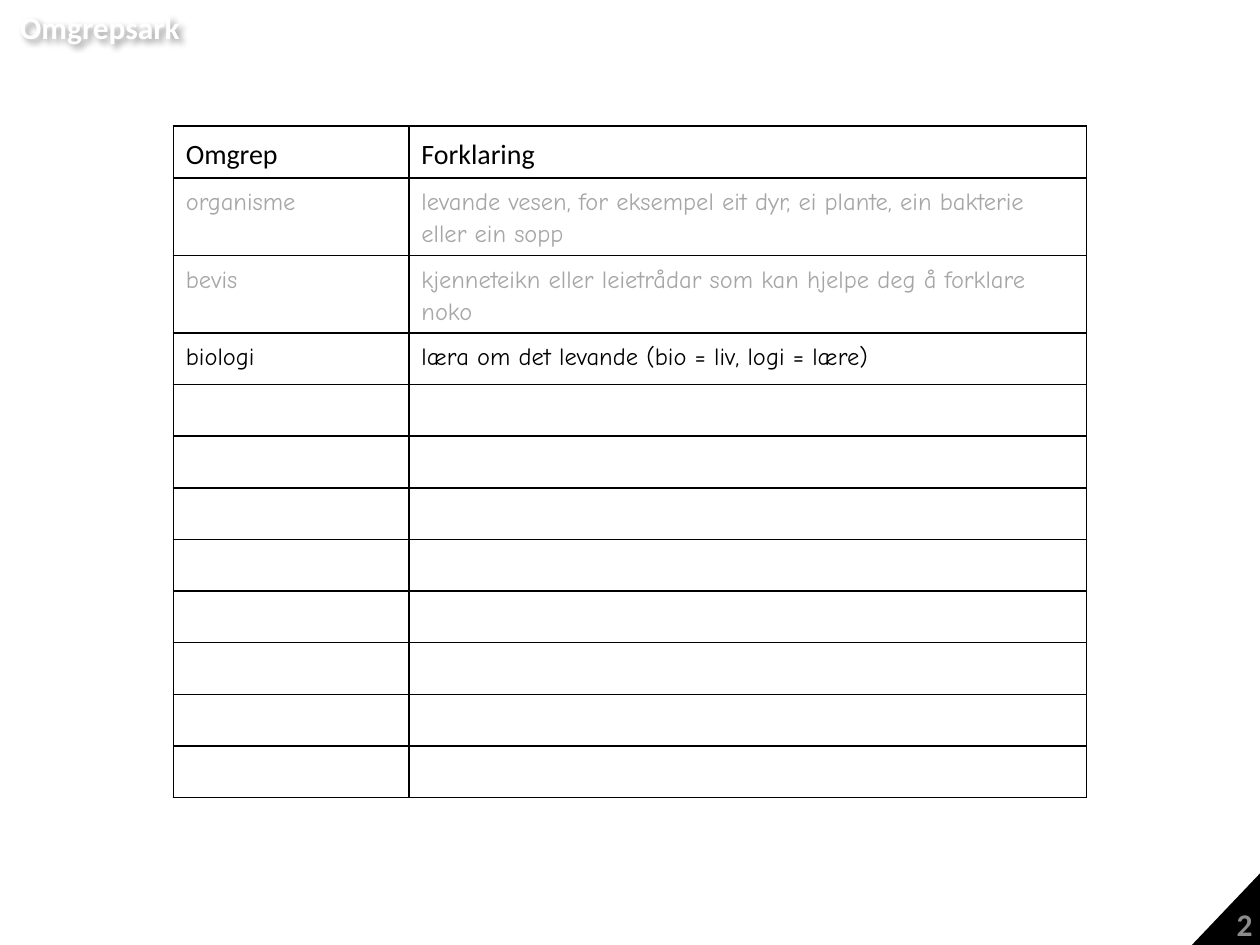
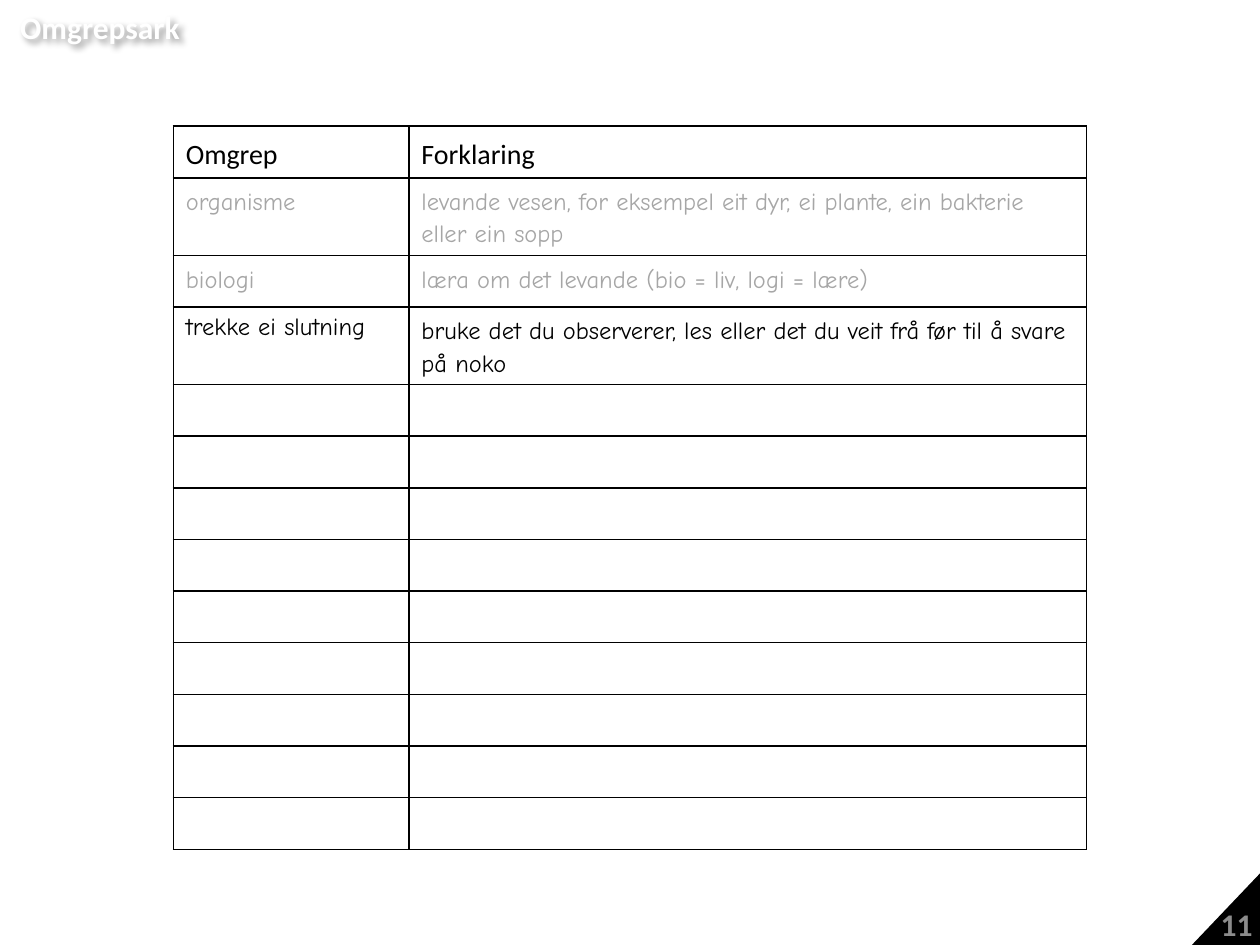
import pptx
import pptx.util
import pptx.dml.color
import pptx.enum.text
import pptx.oxml
import pptx.oxml.ns

Inches = pptx.util.Inches
Pt = pptx.util.Pt
RGBColor = pptx.dml.color.RGBColor
Anchor = pptx.enum.text.MSO_ANCHOR
Align = pptx.enum.text.PP_ALIGN

# Content
TITLE = "Omgrepsark"
HEADINGS = ("Omgrep", "Forklaring")
EXPLANATIONS = {
    "organisme": "levande vesen, for eksempel eit dyr, ei plante, ein bakterie eller ein sopp",
    "bevis": "kjenneteikn eller leietrådar som kan hjelpe deg å forklare noko",
    "biologi": "læra om det levande (bio = liv, logi = lære)",
    "trekke ei slutning": "bruke det du observerer, les eller det du veit frå før til å svare på noko",
}
# The last term on each sheet is the new one; the earlier ones are greyed out.
SHEETS = [
    {"number": 2, "terms": ["organisme", "bevis", "biologi"], "empty_rows": 8},
    {"number": 11, "terms": ["organisme", "biologi", "trekke ei slutning"], "empty_rows": 9},
]
SINGLE_SPACED = {"trekke ei slutning"}

# Shared style
BLACK = RGBColor(0x00, 0x00, 0x00)
WHITE = RGBColor(0xFF, 0xFF, 0xFF)
KNOWN_GREY = RGBColor(0xA6, 0xA6, 0xA6)
NUMBER_GREY = RGBColor(0x8C, 0x8C, 0x8C)
HEADING_FONT = "Calibri"
TERM_FONT = "Comic Neue"

SLIDE_WIDTH, SLIDE_HEIGHT = 10, 7.5
COLUMN_WIDTHS = (1.87, 5.38)
ROW_HEIGHT = 0.41
TABLE_TOP = 1
CORNER_LEFT, CORNER_TOP, CORNER_RIGHT, CORNER_BOTTOM = 9.45, 6.91, 10.04, 7.53

NAMESPACE = pptx.oxml.ns.nsdecls("a")
BORDER_XML = (
    "<a:{side} {namespace} w='12700'><a:solidFill><a:srgbClr val='{color}'/>"
    "</a:solidFill><a:prstDash val='solid'/></a:{side}>"
)
TITLE_SHADOW_XML = (
    f"<a:effectLst {NAMESPACE}><a:outerShdw blurRad='50800' dist='38100' dir='2700000'"
    " algn='tl' rotWithShape='0'><a:srgbClr val='000000'><a:alpha val='40000'/>"
    "</a:srgbClr></a:outerShdw></a:effectLst>"
)


def format_runs(paragraph, font_name, size, color, bold=False):
    for run in paragraph.runs:
        run.font.name = font_name
        run.font.size = Pt(size)
        run.font.color.rgb = color
        run.font.bold = bold


def add_title(slide):
    title = slide.shapes.title
    title.left, title.top = Inches(0.06), Inches(0.01)
    title.width, title.height = Inches(1.48), Inches(0.4)
    title.fill.background()
    title._element.spPr.append(pptx.oxml.parse_xml(TITLE_SHADOW_XML))
    frame = title.text_frame
    frame.text = TITLE
    frame.word_wrap = False
    frame.auto_size = pptx.enum.text.MSO_AUTO_SIZE.NONE
    frame.vertical_anchor = Anchor.TOP
    paragraph = frame.paragraphs[0]
    paragraph.alignment = Align.LEFT
    format_runs(paragraph, HEADING_FONT, 18, WHITE, bold=True)


def add_number_corner(slide, number):
    builder = slide.shapes.build_freeform(Inches(CORNER_LEFT), Inches(CORNER_BOTTOM))
    builder.add_line_segments([
        (Inches(CORNER_RIGHT), Inches(CORNER_TOP)),
        (Inches(CORNER_RIGHT), Inches(CORNER_BOTTOM)),
    ])
    corner = builder.convert_to_shape()
    corner.shadow.inherit = False
    corner.fill.solid()
    corner.fill.fore_color.rgb = BLACK
    corner.line.color.rgb = BLACK
    corner.line.width = Pt(2)
    frame = corner.text_frame
    frame.text = str(number)
    frame.word_wrap = True
    frame.vertical_anchor = Anchor.BOTTOM
    paragraph = frame.paragraphs[0]
    paragraph.alignment = Align.RIGHT
    format_runs(paragraph, HEADING_FONT, 18, NUMBER_GREY, bold=True)


def style_cell(cell):
    properties = cell._tc.get_or_add_tcPr()
    for side in ("lnL", "lnR", "lnT", "lnB"):
        border = BORDER_XML.format(side=side, namespace=NAMESPACE, color=BLACK)
        properties.append(pptx.oxml.parse_xml(border))
    cell.fill.background()


def fill_row(table, row_index, texts, font_name, size, color, anchor):
    for column_index, text in enumerate(texts):
        cell = table.cell(row_index, column_index)
        cell.text_frame.text = text
        cell.vertical_anchor = anchor
        paragraph = cell.text_frame.paragraphs[0]
        paragraph.line_spacing = 1.0 if text in SINGLE_SPACED else 1.15
        format_runs(paragraph, font_name, size, color)


def add_term_table(slide, terms, empty_rows):
    row_count = 1 + len(terms) + empty_rows
    width = sum(COLUMN_WIDTHS)
    table = slide.shapes.add_table(
        row_count, len(COLUMN_WIDTHS),
        Inches((SLIDE_WIDTH - width) / 2), Inches(TABLE_TOP),
        Inches(width), Inches(row_count * ROW_HEIGHT),
    ).table
    table.first_row = False
    table.horz_banding = False
    for column, column_width in zip(table.columns, COLUMN_WIDTHS):
        column.width = Inches(column_width)
    for row in table.rows:
        row.height = Inches(ROW_HEIGHT)
    for cell in table.iter_cells():
        style_cell(cell)

    fill_row(table, 0, HEADINGS, HEADING_FONT, 16, BLACK, Anchor.MIDDLE)
    for row_index, term in enumerate(terms, start=1):
        color = BLACK if term == terms[-1] else KNOWN_GREY
        fill_row(table, row_index, (term, EXPLANATIONS[term]), TERM_FONT, 14, color, Anchor.TOP)


def main():
    presentation = pptx.Presentation()
    presentation.slide_width = Inches(SLIDE_WIDTH)
    presentation.slide_height = Inches(SLIDE_HEIGHT)
    title_only_layout = presentation.slide_layouts[5]
    for sheet in SHEETS:
        slide = presentation.slides.add_slide(title_only_layout)
        add_number_corner(slide, sheet["number"])
        add_term_table(slide, sheet["terms"], sheet["empty_rows"])
        add_title(slide)
    presentation.save("out.pptx")


if __name__ == "__main__":
    main()
